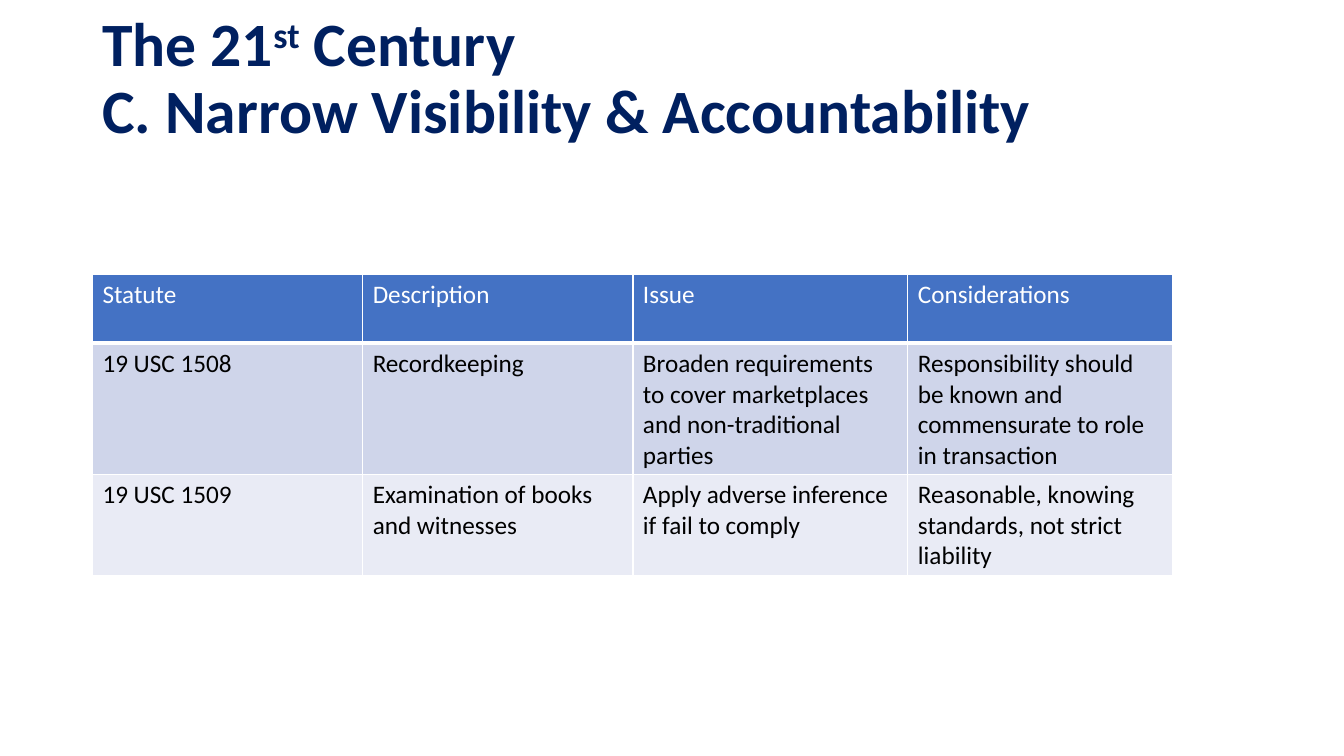
from pptx import Presentation
from pptx.dml.color import RGBColor
from pptx.enum import text
from pptx.oxml import ns, parse_xml
from pptx.util import Cm, Pt

COLORS = {
    "navy": "002060",
    "head": "4472C4",
    "odd": "CFD5EA",
    "even": "E9EBF5",
    "white": "FFFFFF",
    "black": "000000",
}
FONT = "Calibri"
TITLE = [
    [("The 21", False), ("st", True), (" Century", False)],
    [("C. Narrow Visibility & Accountability", False)],
]
ROWS = [
    ["Statute", "Description", "Issue", "Considerations"],
    ["19 USC 1508", "Recordkeeping",
     "Broaden requirements to cover marketplaces and non-traditional parties",
     "Responsibility should be known and commensurate to role in transaction"],
    ["19 USC 1509", "Examination of books and witnesses",
     "Apply adverse inference if fail to comply",
     "Reasonable, knowing standards, not strict liability"],
]
WIDTHS = [6.81, 6.81, 6.93, 6.68]
HEIGHTS = [1.73, 1.75, 1.75]


def color(name):
    return RGBColor.from_string(COLORS[name])


def style(font, size, name, bold=False):
    font.name, font.size, font.bold = FONT, Pt(size), bold
    font.color.rgb = color(name)


def add_title(slide, left, top, width, height):
    box = slide.shapes.add_textbox(Cm(left), Cm(top), Cm(width), Cm(height))
    frame = box.text_frame
    frame.word_wrap = True
    frame.vertical_anchor = text.MSO_ANCHOR.MIDDLE
    para = frame.paragraphs[0]
    para.line_spacing = 0.9
    for i, line in enumerate(TITLE):
        if i:
            para.add_line_break()
        for words, raised in line:
            run = para.add_run()
            run.text = words
            style(run.font, 44, "navy", True)
            if raised:
                run.font._element.set("baseline", "30000")


def add_borders(cell, base):
    """Draw white cell edges, with the bottom one base points wide."""
    props = cell._tc.get_or_add_tcPr()
    for side, width in zip("LRTB", (1, 1, 1, base)):
        props.append(parse_xml(
            f'<a:ln{side} {ns.nsdecls("a")} w="{Pt(width)}"><a:solidFill>'
            f'<a:srgbClr val="{COLORS["white"]}"/></a:solidFill></a:ln{side}>'))


def add_statutes(slide, left, top):
    table = slide.shapes.add_table(
        len(ROWS), len(WIDTHS), Cm(left), Cm(top),
        Cm(sum(WIDTHS)), Cm(sum(HEIGHTS))).table
    for col, width in zip(table.columns, WIDTHS):
        col.width = Cm(width)
    for r, words in enumerate(ROWS):
        table.rows[r].height = Cm(HEIGHTS[r])
        for c, word in enumerate(words):
            cell = table.cell(r, c)
            add_borders(cell, 1 if r else 3)
            cell.fill.solid()
            cell.fill.fore_color.rgb = color(("head", "odd", "even")[r])
            cell.text_frame.text = word
            run = cell.text_frame.paragraphs[0].runs[0]
            style(run.font, 18, "black" if r else "white")


def main():
    deck = Presentation()
    deck.slide_width, deck.slide_height = Cm(33.87), Cm(19.05)
    slide = deck.slides.add_slide(deck.slide_layouts[6])
    add_title(slide, 2.33, 0.18, 29.21, 3.68)
    add_statutes(slide, 2.33, 6.92)
    deck.save("out.pptx")


if __name__ == "__main__":
    main()
